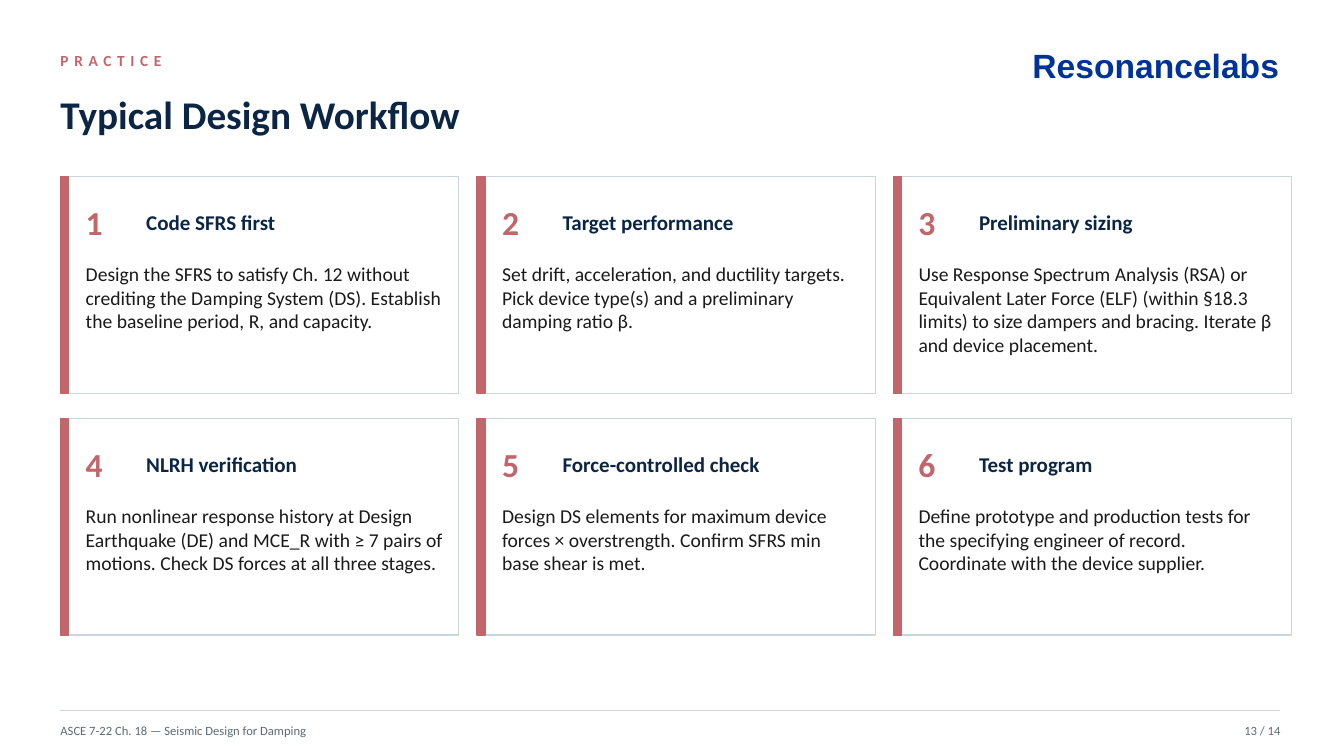
"""Build the Typical Design Workflow slide: six numbered step cards."""
from lxml import etree
from pptx import Presentation
from pptx.dml.color import RGBColor
from pptx.enum.shapes import MSO_CONNECTOR, MSO_SHAPE
from pptx.enum.text import MSO_ANCHOR as ANCHOR, MSO_AUTO_SIZE as AUTO, PP_ALIGN as ALIGN
from pptx.oxml.ns import qn
from pptx.util import Inches, Pt

SECTION = "PRACTICE"
TITLE = "Typical Design Workflow"
BRAND = "Resonancelabs"
FOOTER = "ASCE 7-22 Ch. 18 — Seismic Design for Damping"
PAGE = "13 / 14"
STEPS = [
    ("Code SFRS first",
     "Design the SFRS to satisfy Ch. 12 without crediting the Damping System (DS). "
     "Establish the baseline period, R, and capacity."),
    ("Target performance",
     "Set drift, acceleration, and ductility targets. Pick device type(s) and a "
     "preliminary damping ratio β."),
    ("Preliminary sizing",
     "Use Response Spectrum Analysis (RSA) or Equivalent Later Force (ELF) (within "
     "§18.3 limits) to size dampers and bracing. Iterate β and device placement."),
    ("NLRH verification",
     "Run nonlinear response history at Design Earthquake (DE) and MCE_R with ≥ 7 "
     "pairs of motions. Check DS forces at all three stages."),
    ("Force-controlled check",
     "Design DS elements for maximum device forces × overstrength. Confirm SFRS min "
     "base shear is met."),
    ("Test program",
     "Define prototype and production tests for the specifying engineer of record. "
     "Coordinate with the device supplier."),
]
NAVY, ROSE, RULE, INK, GREY = "0B2545", "C1666B", "C9D6DF", "1A1A1A", "5C6B73"
LEFT, TOP, COLS = 0.6, 1.75, 3
CARD_W, CARD_H, GAP_X, GAP_Y = 3.95, 2.15, 0.18, 0.25


def rgb(value):
    return RGBColor.from_string(value)


def fill_text(sp, text, size, color, bold=False, font="Calibri",
              anchor=ANCHOR.MIDDLE, align=ALIGN.LEFT):
    tf = sp.text_frame
    tf.auto_size = AUTO.NONE
    tf.word_wrap = True
    tf.vertical_anchor = anchor
    tf.margin_left = tf.margin_right = tf.margin_top = tf.margin_bottom = 0
    p = tf.paragraphs[0]
    p.text = text
    p.alignment = align
    p.font.size, p.font.name, p.font.bold = Pt(size), font, bold
    p.font.color.rgb = rgb(color)
    return tf


def add_text(s, box, *args, **style):
    return fill_text(s.shapes.add_textbox(*map(Inches, box)), *args, **style)


def add_rect(s, box, fill, line, width):
    sp = s.shapes.add_shape(MSO_SHAPE.RECTANGLE, *map(Inches, box))
    sp.shadow.inherit = False
    sp.fill.solid()
    sp.fill.fore_color.rgb = rgb(fill)
    sp.line.color.rgb = rgb(line)
    sp.line.width = Pt(width)


def add_card(s, index, heading, body):
    row, col = divmod(index, COLS)
    x = LEFT + col * (CARD_W + GAP_X)
    y = TOP + row * (CARD_H + GAP_Y)
    add_rect(s, (x, y, CARD_W, CARD_H), "FFFFFF", RULE, 0.75)
    add_rect(s, (x, y, 0.08, CARD_H), ROSE, ROSE, 1)
    add_text(s, (x + 0.25, y + 0.2, 0.6, 0.5), str(index + 1), 24, ROSE, bold=True)
    add_text(s, (x + 0.85, y + 0.2, 2.95, 0.5), heading, 15, NAVY, bold=True)
    add_text(s, (x + 0.25, y + 0.85, 3.55, 1.2), body, 14, INK, anchor=ANCHOR.TOP)


def main():
    prs = Presentation()
    prs.slide_width, prs.slide_height = Inches(13.33), Inches(7.5)
    s = prs.slides.add_slide(prs.slide_layouts[5])

    tf = add_text(s, (LEFT, 0.45, 12, 0.3), SECTION, 11, ROSE, bold=True)
    tf.paragraphs[0].runs[0].font._element.set("spc", "400")

    title = s.shapes.title
    title.left, title.top, title.width, title.height = map(Inches, (LEFT, 0.78, 12, 0.7))
    fill_text(title, TITLE, 28, NAVY, bold=True)

    for index, (heading, body) in enumerate(STEPS):
        add_card(s, index, heading, body)

    rule = s.shapes.add_connector(
        MSO_CONNECTOR.STRAIGHT, *map(Inches, (LEFT, 7.05, 12.7, 7.05)))
    rule.line.color.rgb = rgb(RULE)
    rule.line.width = Pt(0.75)
    etree.SubElement(rule._element.spPr, qn("a:effectLst"))
    add_text(s, (LEFT, 7.1, 8, 0.3), FOOTER, 9, GREY)
    add_text(s, (11.5, 7.1, 1.2, 0.3), PAGE, 9, GREY, align=ALIGN.RIGHT)

    tf = add_text(s, (10.24, 0.45, 2.25, 0.45), BRAND, 24, "003399", bold=True,
                  font="Arial", anchor=ANCHOR.TOP)
    tf.word_wrap = False
    prs.save("out.pptx")


if __name__ == "__main__":
    main()
